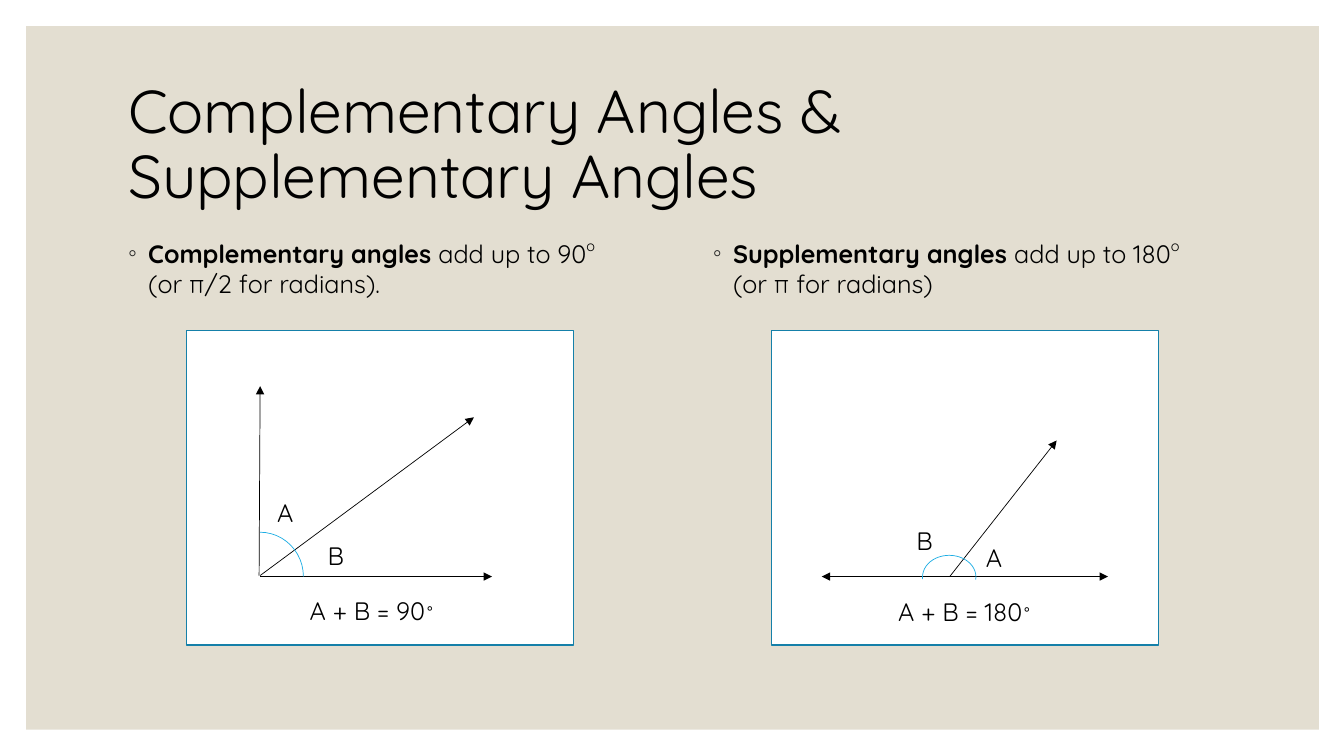
from dataclasses import dataclass

import pptx
import pptx.dml.color
import pptx.enum.shapes
import pptx.enum.text
import pptx.oxml
import pptx.oxml.ns
import pptx.util
from lxml import etree

PX = 9144  # 100 px to the inch

TITLE = "Complementary Angles & Supplementary Angles"

# Runs are (text, bold, raised %). Positions inside a diagram count from its frame.
COLUMNS = [
    {
        "runs": [("Complementary angles ", True, 0), ("add up to 90", False, 0),
                 ("o ", False, 46), ("(or π/2 for radians).", False, 0)],
        "rays": [((72, 243), (73, 55), False), ((73, 244), (303, 244), False),
                 ((73, 243), (285, 86), False)],
        "arc": (30, 200, 86, 88),
        "arc_degrees": (270, 0),
        "labels": [("A", 80, 160), ("B", 130, 203)],
        "sum": ("A + B = 90", 64, 258),
    },
    {
        "runs": [("Supplementary angles ", True, 0), ("add up to 180", False, 0),
                 ("o ", False, 46), ("(or π for radians)", False, 0)],
        "rays": [((50, 244), (334, 244), True), ((177, 244), (283, 109), False)],
        "arc": (150, 223, 53, 43),
        "arc_degrees": (175.4, 5.9),
        "labels": [("A", 203, 205), ("B", 134, 188)],
        "sum": ("A + B = 180", 72, 259),
    },
]

SLIDE_SIZE = (1333, 750)
BACKDROP = (26, 26, 1282, 698)
TITLE_BOX = (117, 70, 1100, 150)
COLUMN_LEFT, COLUMN_STEP = 117, 580
BODY_TOP, BODY_SIZE = 230, (520, 410)
FRAME_OFFSET, FRAME_TOP, FRAME_SIZE = 68, 328, (384, 312)
LABEL_SIZE, SUM_SIZE = (32, 40), (240, 40)


@dataclass(frozen=True)
class Theme:
    font: str = "Quicksand"
    title_size: float = 43.2
    text_size: int = 18
    text: str = "000000"
    bullet: str = "262626"
    backdrop: str = "E3DED1"
    frame: str = "FFFFFF"
    frame_line: str = "1580A9"
    arc: str = "1CADE4"


THEME = Theme()


def color(code):
    return pptx.dml.color.RGBColor.from_string(code)


def lengths(*pixels):
    return [pptx.util.Emu(round(pixel * PX)) for pixel in pixels]


def place(shape, box):
    shape.left, shape.top, shape.width, shape.height = lengths(*box)


def style_run(run, size=THEME.text_size, bold=False, raised=0):
    run.font.name = THEME.font
    run.font.size = pptx.util.Pt(size)
    run.font.bold = bold
    run.font.color.rgb = color(THEME.text)
    if raised:
        run.font._element.set("baseline", str(raised * 1000))


def write_runs(paragraph, runs):
    for text, bold, raised in runs:
        run = paragraph.add_run()
        run.text = text
        style_run(run, bold=bold, raised=raised)


def set_line(line, code, width):
    line.color.rgb = color(code)
    line.width = pptx.util.Pt(width)


def add_preset(slide, kind, box, fill=None, line=None, width=1):
    shape = slide.shapes.add_shape(kind, *lengths(*box))
    shape.shadow.inherit = False
    if fill:
        shape.fill.solid()
        shape.fill.fore_color.rgb = color(fill)
    else:
        shape.fill.background()
    if line:
        set_line(shape.line, line, width)
    else:
        shape.line.fill.background()
    return shape


def add_ray(slide, start, end, both_ends):
    ray = slide.shapes.add_connector(
        pptx.enum.shapes.MSO_CONNECTOR.STRAIGHT, *lengths(*start, *end))
    set_line(ray.line, THEME.text, 0.5)
    properties = ray.element.spPr
    line = properties.find(pptx.oxml.ns.qn("a:ln"))
    for name in ("a:headEnd", "a:tailEnd") if both_ends else ("a:tailEnd",):
        etree.SubElement(line, pptx.oxml.ns.qn(name)).set("type", "triangle")
    etree.SubElement(properties, pptx.oxml.ns.qn("a:effectLst"))


def add_text(slide, box, runs, centered=False):
    frame = slide.shapes.add_textbox(*lengths(*box)).text_frame
    frame.word_wrap = True
    paragraph = frame.paragraphs[0]
    if centered:
        paragraph.alignment = pptx.enum.text.PP_ALIGN.CENTER
    write_runs(paragraph, runs)


def add_bullet(paragraph):
    properties = paragraph._p.get_or_add_pPr()
    properties.set("marL", str(20 * PX))
    properties.set("indent", str(-20 * PX))
    bullet_color = etree.SubElement(properties, pptx.oxml.ns.qn("a:buClr"))
    etree.SubElement(bullet_color, pptx.oxml.ns.qn("a:srgbClr")).set("val", THEME.bullet)
    etree.SubElement(properties, pptx.oxml.ns.qn("a:buChar")).set("char", "◦")


def fill_title(title):
    place(title, TITLE_BOX)
    frame = title.text_frame
    frame.text = TITLE
    frame.auto_size = pptx.enum.text.MSO_AUTO_SIZE.NONE
    frame.vertical_anchor = pptx.enum.text.MSO_ANCHOR.MIDDLE
    paragraph = frame.paragraphs[0]
    paragraph.alignment = pptx.enum.text.PP_ALIGN.LEFT
    paragraph.line_spacing = 0.9
    style_run(paragraph.runs[0], THEME.title_size)


def fill_body(body, left, runs):
    place(body, (left, BODY_TOP, *BODY_SIZE))
    body.text_frame.auto_size = pptx.enum.text.MSO_AUTO_SIZE.NONE
    paragraph = body.text_frame.paragraphs[0]
    add_bullet(paragraph)
    paragraph.space_before = pptx.util.Pt(0)
    write_runs(paragraph, runs)


def add_diagram(slide, left, column):
    def inside(x, y):
        return left + x, FRAME_TOP + y

    kinds = pptx.enum.shapes.MSO_SHAPE
    add_preset(slide, kinds.RECTANGLE, (left, FRAME_TOP, *FRAME_SIZE),
               THEME.frame, THEME.frame_line)
    for start, end, both_ends in column["rays"]:
        add_ray(slide, inside(*start), inside(*end), both_ends)
    x, y, *size = column["arc"]
    arc = add_preset(slide, kinds.ARC, (*inside(x, y), *size), line=THEME.arc, width=0.5)
    for index, degrees in enumerate(column["arc_degrees"]):
        arc.adjustments[index] = degrees * 0.6
    for letter, x, y in column["labels"]:
        add_text(slide, (*inside(x, y), *LABEL_SIZE), [(letter, False, 0)])
    total, x, y = column["sum"]
    add_text(slide, (*inside(x, y), *SUM_SIZE),
             [(total, False, 0), ("∘", False, 30)], centered=True)


def main():
    presentation = pptx.Presentation()
    presentation.slide_width, presentation.slide_height = lengths(*SLIDE_SIZE)
    slide = presentation.slides.add_slide(presentation.slide_layouts.get_by_name("Two Content"))
    title, *bodies = slide.placeholders
    backdrop = add_preset(slide, pptx.enum.shapes.MSO_SHAPE.RECTANGLE, BACKDROP, THEME.backdrop)
    title.element.addprevious(backdrop.element)
    fill_title(title)
    for index, (body, column) in enumerate(zip(bodies, COLUMNS)):
        left = COLUMN_LEFT + index * COLUMN_STEP
        fill_body(body, left, column["runs"])
        add_diagram(slide, left + FRAME_OFFSET, column)
    presentation.save("out.pptx")


if __name__ == "__main__":
    main()
